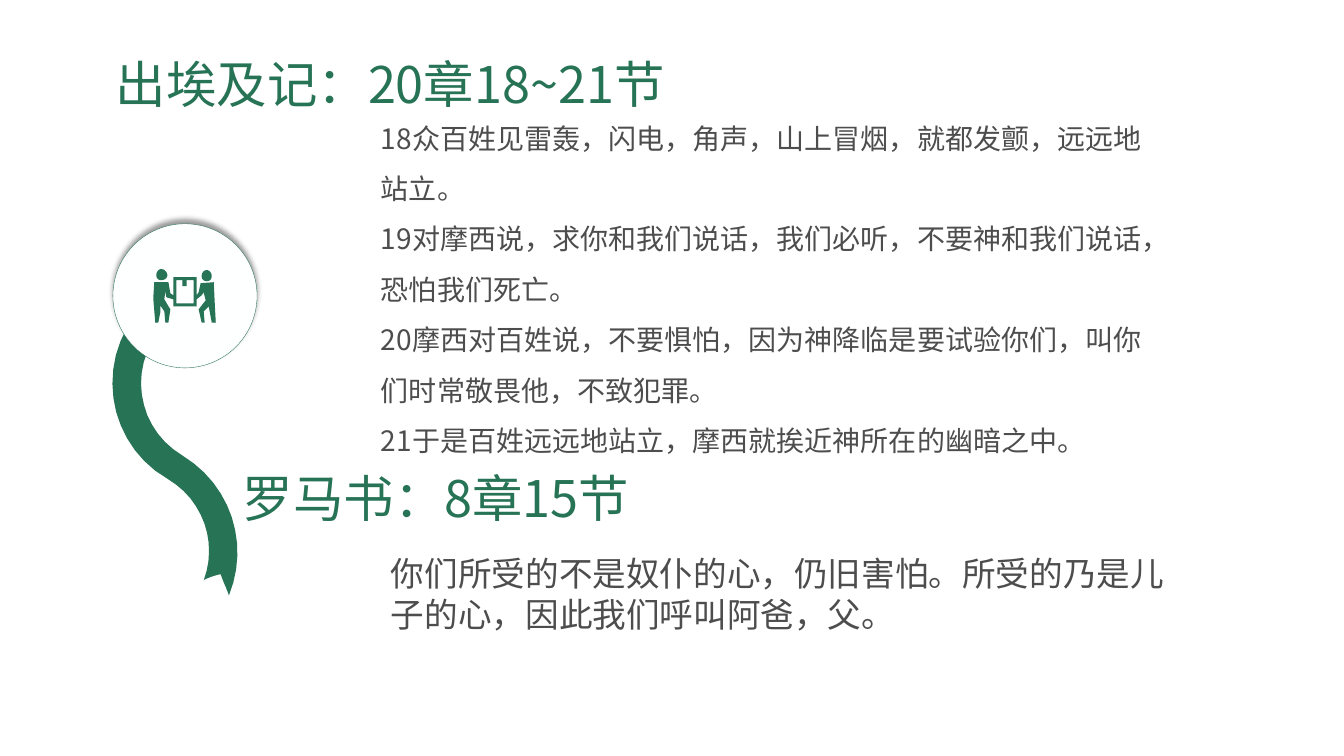
"""Build a slide with two Bible passages beside a green ribbon and a carrying badge."""
from lxml import etree
from pptx import Presentation
from pptx.dml.color import RGBColor
from pptx.enum.shapes import MSO_SHAPE
from pptx.enum.text import MSO_ANCHOR, MSO_AUTO_SIZE, PP_ALIGN
from pptx.oxml.ns import qn
from pptx.util import Inches, Pt

OVAL = MSO_SHAPE.OVAL
MIDDLE, TOP = MSO_ANCHOR.MIDDLE, MSO_ANCHOR.TOP
NO_FIT, GROW = MSO_AUTO_SIZE.NONE, MSO_AUTO_SIZE.SHAPE_TO_FIT_TEXT
LEFT = PP_ALIGN.LEFT
GREEN, GREY, BADGE_WHITE = "277356", "4D4D4D", "FEFFFF"
CJK_FONT = "Noto Sans CJK SC"
HEADING_WIDTH, HEADING_HEIGHT = 10.76, 0.93
UNITS, CURVE_STEPS = 1000, 12


def write(box, area, lines, size, color, font=CJK_FONT, spacing=None, anchor=MIDDLE, fit=NO_FIT):
    box.left, box.top, box.width, box.height = [Inches(v) for v in area]
    frame = box.text_frame
    frame.text = "\n".join(lines)
    frame.word_wrap, frame.auto_size, frame.vertical_anchor = True, fit, anchor
    for paragraph in frame.paragraphs:
        paragraph.alignment = LEFT
        paragraph.line_spacing = spacing
        paragraph.font.size = Pt(size)
        paragraph.font.name = font
        paragraph.font.color.rgb = RGBColor.from_string(color)
        defaults = paragraph._p.pPr.find(qn("a:defRPr"))
        etree.SubElement(defaults, qn("a:ea"), typeface=CJK_FONT)


def draw_outline(shapes, contours):
    builder = None
    for start, *segments in contours:
        points = [start]
        for segment in segments:
            if len(segment) == 2:
                points.append(segment)
                continue
            ends = [points[-1], segment[:2], segment[2:4], segment[4:]]
            for step in range(1, CURVE_STEPS + 1):
                t = step / CURVE_STEPS
                weights = ((1 - t) ** 3, 3 * t * (1 - t) ** 2, 3 * t * t * (1 - t), t ** 3)
                points.append(tuple(sum(w * p[axis] for w, p in zip(weights, ends)) for axis in (0, 1)))
        scaled = [(x * UNITS, y * UNITS) for x, y in points]
        if builder is None:
            builder = shapes.build_freeform(*scaled[0], scale=Inches(1) / UNITS)
        else:
            builder.move_to(*scaled[0])
        builder.add_line_segments(scaled[1:], close=True)
    outline = builder.convert_to_shape()
    outline.fill.solid()
    outline.fill.fore_color.rgb = RGBColor.from_string(GREEN)
    outline.line.fill.background()
    outline.shadow.inherit = False


prs = Presentation()
prs.slide_width, prs.slide_height = Inches(13.33), Inches(7.5)
slide = prs.slides.add_slide(prs.slide_layouts[5])
shapes = slide.shapes

write(shapes.title, (1.05, 0.4, HEADING_WIDTH, HEADING_HEIGHT), ["出埃及记：20章18~21节"], 36, GREEN, spacing=0.9)

ribbon = [
    (1.36, 3.11), (1.26, 3.25), (0.96, 3.78, 1.14, 4.45, 1.66, 4.75),
    (2.02, 4.96, 2.16, 5.39, 2.02, 5.76), (2.01, 5.75, 2.18, 5.69, 2.19, 5.7),
    (2.2, 5.74, 2.27, 5.89, 2.27, 5.91), (2.48, 5.4, 2.29, 4.81, 1.81, 4.52),
    (1.42, 4.29, 1.28, 3.79, 1.51, 3.39), (1.55, 3.33),
]
draw_outline(shapes, [ribbon])

badge = shapes.add_shape(OVAL, Inches(1.12), Inches(2.22), Inches(1.43), Inches(1.43))
badge.fill.solid()
badge.fill.fore_color.rgb = RGBColor.from_string(BADGE_WHITE)
badge.line.color.rgb = RGBColor.from_string(GREEN)
badge.line.width = Pt(0.25)
badge.shadow.inherit = False
effects = badge._element.spPr.find(qn("a:effectLst"))
glow = etree.SubElement(effects, qn("a:outerShdw"), blurRad=str(Pt(4)), dist=str(Pt(3)),
                        dir="16200000", algn="b", rotWithShape="0")
shade = etree.SubElement(glow, qn("a:srgbClr"), val="000000")
etree.SubElement(shade, qn("a:alpha"), val="40000")

verses = [
    "18众百姓见雷轰，闪电，角声，山上冒烟，就都发颤，远远地站立。",
    "19对摩西说，求你和我们说话，我们必听，不要神和我们说话，恐怕我们死亡。",
    "20摩西对百姓说，不要惧怕，因为神降临是要试验你们，叫你们时常敬畏他，不致犯罪。",
    "21于是百姓远远地站立，摩西就挨近神所在的幽暗之中。",
]
write(shapes.add_textbox(0, 0, 0, 0), (3.68, 1.22, 8.02, 3.13), verses, 20, GREY, spacing=1.5)

left_head = [(1.6, 2.67), (1.63, 2.67, 1.66, 2.7, 1.66, 2.73), (1.66, 2.76, 1.63, 2.78, 1.6, 2.78),
             (1.57, 2.78, 1.55, 2.76, 1.55, 2.73), (1.55, 2.7, 1.57, 2.67, 1.6, 2.67)]
right_head = [(2.05, 2.68), (2.08, 2.68, 2.1, 2.71, 2.1, 2.74), (2.1, 2.77, 2.08, 2.79, 2.05, 2.79),
              (2.02, 2.79, 2, 2.77, 2, 2.74), (2, 2.71, 2.02, 2.68, 2.05, 2.68)]
box_opening = [(1.85, 2.78), (1.85, 2.84), (1.81, 2.84), (1.81, 2.78),
               (1.75, 2.78), (1.75, 3.01), (1.92, 3.01), (1.92, 2.78)]
carriers = [
    (1.73, 2.75), (1.72, 2.75), (1.72, 2.93), (1.69, 2.91), (1.67, 2.8), (1.53, 2.8),
    (1.52, 2.96), (1.53, 3.08), (1.54, 3.2), (1.57, 3.2), (1.59, 3.1), (1.59, 3.03),
    (1.63, 3.09), (1.64, 3.2), (1.67, 3.2), (1.69, 3.07), (1.63, 2.97), (1.64, 2.89),
    (1.65, 2.95), (1.72, 2.97), (1.72, 3.04), (1.95, 3.04), (1.95, 2.97), (2, 2.93),
    (2.02, 2.9), (2.04, 2.98), (1.97, 3.07), (2, 3.2), (2.03, 3.2), (2.02, 3.09),
    (2.07, 3.04), (2.1, 3.2), (2.14, 3.2), (2.13, 3.01), (2.12, 2.8), (1.99, 2.81),
    (1.97, 2.9), (1.95, 2.93), (1.95, 2.75),
]
draw_outline(shapes, [left_head, box_opening, carriers, right_head])

write(shapes.add_textbox(0, 0, 0, 0), (2.31, 4.51, HEADING_WIDTH, HEADING_HEIGHT),
      ["罗马书：8章15节"], 36, GREEN, spacing=0.9)
write(shapes.add_textbox(0, 0, 0, 0), (3.78, 5.44, 8.14, 0.91),
      ["你们所受的不是奴仆的心，仍旧害怕。所受的乃是儿子的心，因此我们呼叫阿爸，父。"],
      24, GREY, font="Calibri", anchor=TOP, fit=GROW)

prs.save("out.pptx")
